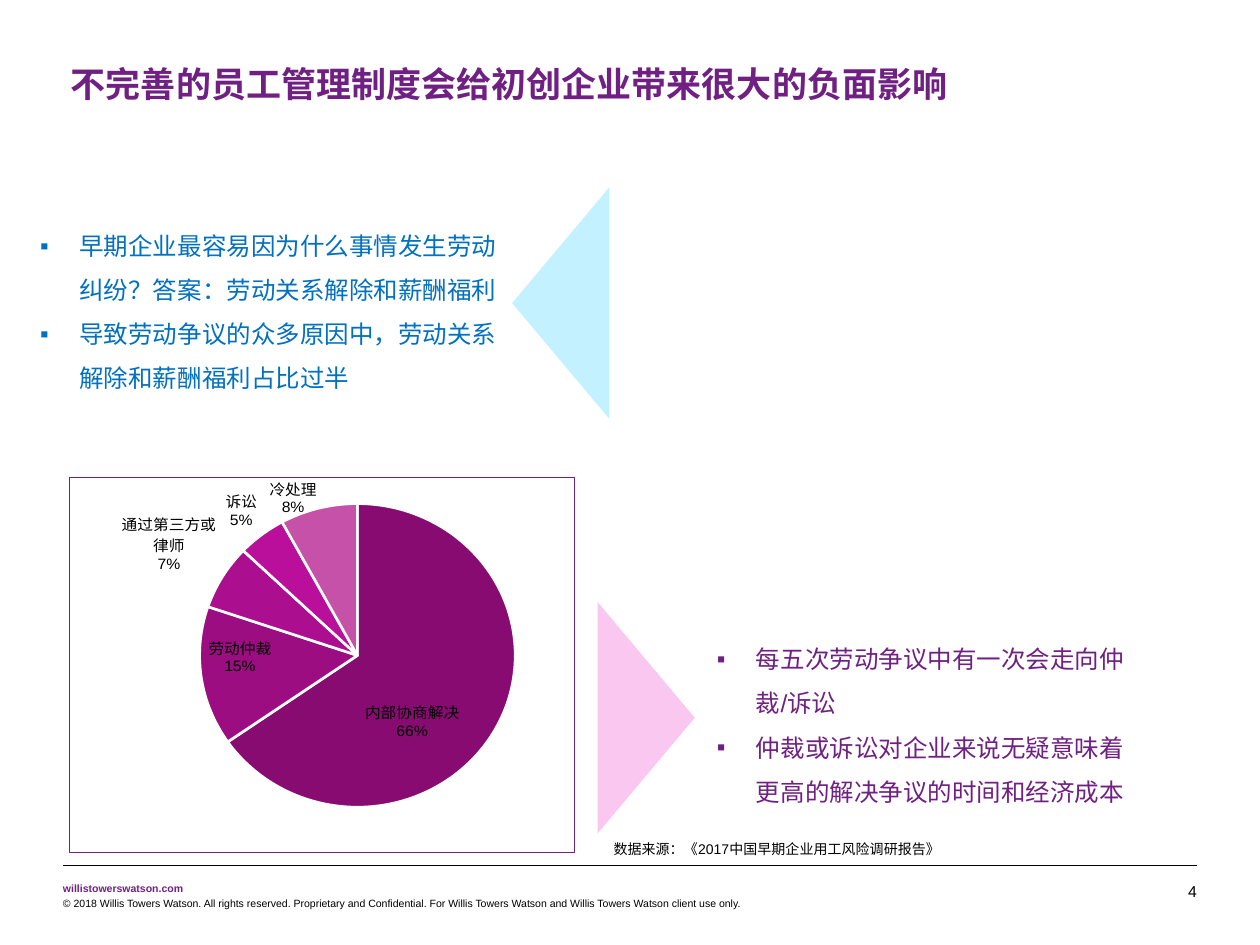
"""Build a slide on how weak employee management harms start-ups."""
import pptx
import pptx.chart.data
import pptx.dml.color
import pptx.enum.chart
import pptx.enum.shapes
import pptx.enum.text
import pptx.oxml
import pptx.oxml.ns
import pptx.util

Cm = pptx.util.Cm
Pt = pptx.util.Pt
RGBColor = pptx.dml.color.RGBColor
qn = pptx.oxml.ns.qn
Align = pptx.enum.text.PP_ALIGN
Anchor = pptx.enum.text.MSO_ANCHOR
LabelPosition = pptx.enum.chart.XL_LABEL_POSITION

PURPLE = RGBColor(0x70, 0x20, 0x82)
BLUE = RGBColor(0x00, 0x70, 0xC0)
BLACK = RGBColor(0x00, 0x00, 0x00)
WHITE = RGBColor(0xFF, 0xFF, 0xFF)
PALE_BLUE = RGBColor(0xC3, 0xF1, 0xFF)
PALE_PINK = RGBColor(0xFA, 0xC7, 0xF1)
SLICES = [RGBColor(0x88, 0x0B, 0x71), RGBColor(0x9C, 0x0D, 0x81),
          RGBColor(0xAB, 0x0E, 0x8E), RGBColor(0xBA, 0x0F, 0x9A),
          RGBColor(0xC6, 0x51, 0xA9)]
NS = pptx.oxml.ns.nsdecls("a", "c")


def apply(target, values):
    for name, value in values.items():
        setattr(target, name, value)


def element(tag, body="", attributes=""):
    return pptx.oxml.parse_xml(f"<{tag} {NS} {attributes}>{body}</{tag}>")


def manual_layout(**values):
    body = "".join(f'<c:{name} val="{value}"/>' for name, value in values.items())
    return element("c:layout", f"<c:manualLayout>{body}</c:manualLayout>")


class SlideBuilder:
    """Hold the text style and the current slide."""

    font_name = "Arial"
    percent_format = '0"%"'

    def __init__(self, slide):
        self.slide = slide

    def style_font(self, font, size, color, bold=False):
        apply(font, {"name": self.font_name, "size": Pt(size), "bold": bold})
        font.color.rgb = color

    def text(self, box, lines, size, color, bold=False, bullet=None, inset=True,
             wrap=True, align=Align.LEFT, anchor=Anchor.TOP):
        frame = self.slide.shapes.add_textbox(*map(Cm, box)).text_frame
        apply(frame, {"word_wrap": wrap, "vertical_anchor": anchor})
        if not inset:
            apply(frame, {f"margin_{side}": 0
                          for side in ("left", "right", "top", "bottom")})
        for index, line in enumerate(lines):
            paragraph = frame.add_paragraph() if index else frame.paragraphs[0]
            paragraph.alignment = align
            if bullet:
                paragraph.line_spacing = 1.5
                properties = paragraph._p.get_or_add_pPr()
                properties.set("marL", str(Cm(0.79)))
                properties.set("indent", str(Cm(-0.79)))
                properties.append(element("a:buFont", "", 'typeface="Arial"'))
                properties.append(element("a:buChar", "", f'char="{bullet}"'))
            run = paragraph.add_run()
            run.text = line
            self.style_font(run.font, size, color, bold)

    def rule(self, x1, x2, y):
        line = self.slide.shapes.add_connector(
            pptx.enum.shapes.MSO_CONNECTOR.STRAIGHT, Cm(x1), Cm(y), Cm(x2), Cm(y))
        line.line.color.rgb = BLACK
        line.line.width = Pt(0.25)
        line._element.spPr.append(element("a:effectLst"))

    def triangle(self, left, top, rotation, color):
        shape = self.slide.shapes.add_shape(
            pptx.enum.shapes.MSO_SHAPE.ISOSCELES_TRIANGLE,
            Cm(left), Cm(top), Cm(4.67), Cm(1.96))
        shape.rotation = rotation
        shape.shadow.inherit = False
        shape.fill.solid()
        shape.fill.fore_color.rgb = color
        shape.line.fill.background()

    def pie(self, box, shares, colors, placed_labels):
        data = pptx.chart.data.CategoryChartData(number_format=self.percent_format)
        data.categories = list(shares)
        data.add_series("Series 1", list(shares.values()))
        chart = self.slide.shapes.add_chart(
            pptx.enum.chart.XL_CHART_TYPE.PIE, *map(Cm, box), data).chart
        apply(chart, {"has_legend": False, "has_title": False})
        self.style_font(chart.font, 9, BLACK)
        chart.plots[0].vary_by_categories = True
        series = chart.plots[0].series[0]
        for index, color in enumerate(colors):
            slice_format = series.points[index].format
            slice_format.fill.solid()
            slice_format.fill.fore_color.rgb = color
            slice_format.line.color.rgb = WHITE
            slice_format.line.width = Pt(1.5)

        labels = series.data_labels
        apply(labels, {"show_value": True, "show_category_name": True,
                       "number_format": self.percent_format,
                       "number_format_is_linked": False,
                       "position": LabelPosition.OUTSIDE_END})
        self.style_font(labels.font, 9, BLACK)
        for index, (position, shift) in placed_labels.items():
            label = series.points[index].data_label
            label.position = position
            self.style_font(label.font, 9, BLACK)
            if shift:
                number = labels._element.findall(qn("c:dLbl"))[index].find(qn("c:idx"))
                number.addnext(manual_layout(x=shift[0], y=shift[1]))
        for shown in labels._element.iter(qn("c:showCatName")):
            shown.set("val", "1")
        for last in list(labels._element.iter(qn("c:showBubbleSize"))):
            last.addnext(element("c:separator", "\n"))

        body = chart._chartSpace.find(qn("c:chart"))
        area = body.find(qn("c:plotArea"))
        for automatic in area.findall(qn("c:layout")):
            area.remove(automatic)
        area.insert(0, manual_layout(layoutTarget="inner", xMode="edge", yMode="edge",
                                     x=0.25, y=0.07, w=0.64, h=0.81))
        body.addnext(element(
            "c:spPr",
            f'<a:solidFill><a:srgbClr val="{WHITE}"/></a:solidFill>'
            f'<a:ln w="{Pt(0.5)}"><a:solidFill><a:srgbClr val="{PURPLE}"/>'
            "</a:solidFill></a:ln>"))


def main():
    deck = pptx.Presentation()
    apply(deck, {"slide_width": Cm(25.4), "slide_height": Cm(19.05)})
    page = SlideBuilder(deck.slides.add_slide(deck.slide_layouts[6]))

    page.text((1.27, 17.78, 2.44, 0.25), ["willistowerswatson.com"], 6, PURPLE,
              bold=True, inset=False, wrap=False)
    page.rule(1.27, 24.13, 17.45)
    page.text((1.43, 1.27, 22.7, 0.86),
              ["不完善的员工管理制度会给初创企业带来很大的负面影响"], 20, PURPLE,
              bold=True, inset=False)
    page.text((23.06, 17.78, 1.07, 0.38), ["4"], 9, BLACK, inset=False,
              align=Align.RIGHT, anchor=Anchor.BOTTOM)
    page.text((1.27, 18.08, 14.66, 0.25),
              ["© 2018 Willis Towers Watson. All rights reserved. Proprietary and "
               "Confidential. For Willis Towers Watson and Willis Towers Watson "
               "client use only."], 6, BLACK, inset=False)
    page.text((12.12, 16.81, 12.5, 0.61),
              ["数据来源：《2017中国早期企业用工风险调研报告》"], 8, BLACK)
    page.text((0.56, 4.24, 9.75, 4.75),
              ["早期企业最容易因为什么事情发生劳动纠纷？答案：劳动关系解除和薪酬福利",
               "导致劳动争议的众多原因中，劳动关系解除和薪酬福利占比过半"],
              14, BLUE, bullet="▪")
    page.text((14.2, 12.57, 9.02, 4.62),
              ["每五次劳动争议中有一次会走向仲裁/诉讼",
               "仲裁或诉讼对企业来说无疑意味着更高的解决争议的时间和经济成本"],
              14, PURPLE, bullet="▪")
    page.triangle(8.97, 5.13, 270, PALE_BLUE)
    page.pie((1.4, 9.32, 10.19, 7.87),
             {"内部协商解决": 66, "劳动仲裁": 15, "通过第三方或律师": 7,
              "诉讼": 5, "冷处理": 8},
             SLICES,
             {0: (LabelPosition.CENTER, (-0.03, 0.08)),
              1: (LabelPosition.INSIDE_END, None)})
    page.triangle(10.69, 13.49, 90, PALE_PINK)
    deck.save("out.pptx")


if __name__ == "__main__":
    main()
